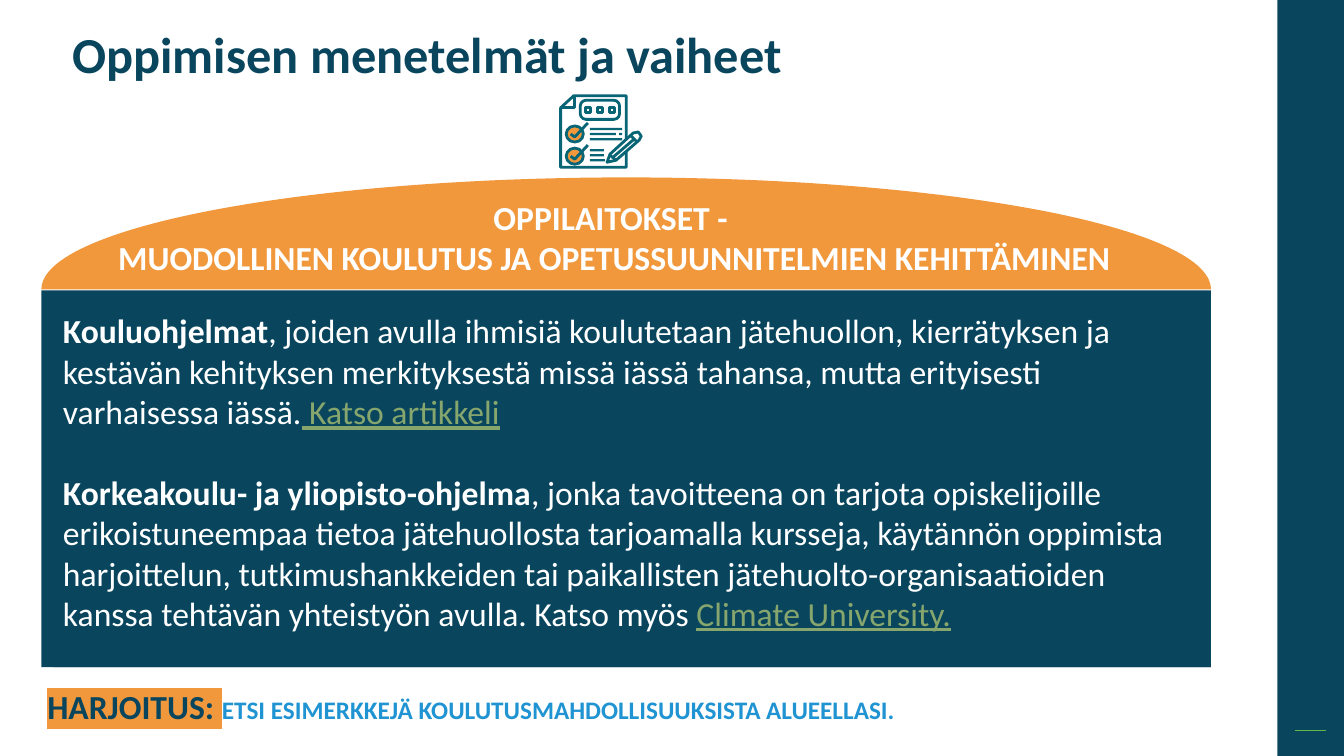
from collections import namedtuple
from math import cos, pi, sin

from lxml.etree import SubElement
from pptx import Presentation
from pptx.dml.color import RGBColor
from pptx.enum.shapes import MSO_CONNECTOR, MSO_SHAPE
from pptx.enum.text import MSO_ANCHOR, PP_ALIGN
from pptx.oxml.ns import qn
from pptx.util import Inches, Pt

NAVY = RGBColor(0x09, 0x46, 0x5E)
ORANGE = RGBColor(0xF1, 0x98, 0x3D)
TEAL = RGBColor(0x08, 0x65, 0x75)
LINK_GREEN = RGBColor(0x87, 0xA6, 0x6E)
RULE_GREEN = RGBColor(0x60, 0xBA, 0x47)
BLUE = RGBColor(0x20, 0x94, 0xD2)
WHITE = RGBColor(0xFF, 0xFF, 0xFF)

WIDTH, HEIGHT = Inches(13.33), Inches(7.5)
Box = namedtuple("Box", "left top width height")
SLIDE_BOX = Box(0, 0, WIDTH, HEIGHT)


def part(box, left, top, width, height):
    return Box(
        round(box.left + box.width * left / 100),
        round(box.top + box.height * top / 100),
        round(box.width * width / 100),
        round(box.height * height / 100),
    )


def paint(shape, fill=None, line=None, weight=2):
    shape.shadow.inherit = False
    if fill is None:
        shape.fill.background()
    else:
        shape.fill.solid()
        shape.fill.fore_color.rgb = fill
    if line is None:
        shape.line.fill.background()
    else:
        shape.line.color.rgb = line
        shape.line.width = Pt(weight)
    return shape


def add_outline(slide, points, close=True, **style):
    points = [(round(x), round(y)) for x, y in points]
    builder = slide.shapes.build_freeform(*points[0])
    builder.add_line_segments(points[1:], close=close)
    return paint(builder.convert_to_shape(), **style)


def add_run(paragraph, text, color, size=24, bold=False, underline=False, highlight=None):
    run = paragraph.add_run()
    run.text = text
    font = run.font
    font.name, font.size, font.bold = "Calibri", Pt(size), bold
    font.color.rgb = color
    if underline:
        font.underline = True
    if highlight is not None:
        marker = SubElement(run._r.rPr, qn("a:highlight"))
        SubElement(marker, qn("a:srgbClr")).set("val", str(highlight))
        run._r.rPr.find(qn("a:solidFill")).addnext(marker)


def start_text(shape, anchor=MSO_ANCHOR.TOP):
    frame = shape.text_frame
    frame.word_wrap = True
    frame.vertical_anchor = anchor
    return frame


def add_sidebar(slide, box):
    paint(slide.shapes.add_shape(MSO_SHAPE.RECTANGLE, *box), NAVY)
    mark = part(box, 26, 96.67, 47, 0)
    rule = slide.shapes.add_connector(
        MSO_CONNECTOR.STRAIGHT, mark.left, mark.top, mark.left + mark.width, mark.top
    )
    rule.line.color.rgb = RULE_GREEN
    rule.line.width = Pt(1)
    SubElement(rule._element.spPr, qn("a:effectLst"))


def add_title(slide, box):
    frame = start_text(slide.shapes.add_textbox(*box), MSO_ANCHOR.MIDDLE)
    title = frame.paragraphs[0]
    title.line_spacing = 0.9
    add_run(title, "Oppimisen menetelmät ja vaiheet", NAVY, 36, bold=True)


def add_dome(slide, box):
    radius = box.width / 2
    steps = 120
    arc = [
        (
            box.left + radius - radius * cos(pi * step / steps),
            box.top + box.height * (1 - sin(pi * step / steps)),
        )
        for step in range(steps + 1)
    ]
    add_outline(slide, arc, fill=ORANGE)
    frame = start_text(slide.shapes.add_textbox(*part(box, 5, 13, 88, 82)))
    headings = (
        "OPPILAITOKSET - ",
        "MUODOLLINEN KOULUTUS JA OPETUSSUUNNITELMIEN KEHITTÄMINEN",
    )
    for index, heading in enumerate(headings):
        line = frame.add_paragraph() if index else frame.paragraphs[0]
        line.alignment = PP_ALIGN.CENTER
        add_run(line, heading, WHITE, bold=True)


def add_programmes(slide, box):
    paint(slide.shapes.add_shape(MSO_SHAPE.RECTANGLE, *box), NAVY)
    body = slide.shapes.add_shape(MSO_SHAPE.RECTANGLE, *part(box, 1, 4, 99, 96))
    frame = start_text(paint(body, NAVY))
    programmes = (
        (
            "Kouluohjelmat",
            ", joiden avulla ihmisiä koulutetaan jätehuollon, kierrätyksen ja kestävän "
            "kehityksen merkityksestä missä iässä tahansa, mutta erityisesti varhaisessa iässä.",
            " Katso artikkeli",
        ),
        (
            "Korkeakoulu- ja yliopisto-ohjelma",
            ", jonka tavoitteena on tarjota opiskelijoille erikoistuneempaa tietoa "
            "jätehuollosta tarjoamalla kursseja, käytännön oppimista harjoittelun, "
            "tutkimushankkeiden tai paikallisten jätehuolto-organisaatioiden kanssa "
            "tehtävän yhteistyön avulla. Katso myös ",
            "Climate University.",
        ),
    )
    for index, (name, description, reference) in enumerate(programmes):
        programme = frame.add_paragraph() if index else frame.paragraphs[0]
        programme.alignment = PP_ALIGN.LEFT
        if index:
            programme.space_before = Pt(29)
        add_run(programme, name, WHITE, bold=True)
        add_run(programme, description, WHITE)
        add_run(programme, reference, LINK_GREEN, underline=True)


def add_checklist(slide, box):
    unit = box.width / 82

    def place(x, y):
        return box.left + x * unit, box.top + y * unit

    def stroke(points, close=False, fill=None, weight=2):
        add_outline(
            slide, [place(*point) for point in points], close, fill=fill, line=TEAL, weight=weight
        )

    def block(kind, x, y, width, height, **style):
        left, top = place(x, y)
        frame = (round(value) for value in (left, top, width * unit, height * unit))
        return paint(slide.shapes.add_shape(kind, *frame), **style)

    stroke([(1, 13), (14, 1), (66, 1), (66, 72), (1, 72)], close=True)
    stroke([(15, 1), (15, 13), (1, 13)])
    code_box = block(MSO_SHAPE.ROUNDED_RECTANGLE, 20.5, 5.5, 39, 19, line=TEAL)
    code_box.adjustments[0] = 0.3
    for column in range(3):
        block(MSO_SHAPE.RECTANGLE, 25.5 + 12 * column, 13, 5, 4.5, line=TEAL)
    for y in (39, 61):
        block(MSO_SHAPE.OVAL, 6.5, y - 8, 17, 16, fill=ORANGE, line=TEAL)
        stroke([(11, y), (15, y + 3), (28, y - 11)])
    bars = ((30, 33, 32), (30, 38, 26), (59, 38, 3), (30, 43, 32),
            (30, 54, 14), (30, 59, 14), (30, 64, 15))
    for x, y, width in bars:
        block(MSO_SHAPE.RECTANGLE, x, y, width, 2.3, fill=TEAL)
    stroke(
        [(47, 67), (50, 59), (73, 38), (78, 37), (81, 41), (79, 45), (56, 65)],
        close=True, fill=WHITE,
    )
    stroke([(53, 62), (74, 44)])
    stroke([(71, 41), (76, 46)])
    stroke([(50, 60), (56, 65)])


def add_exercise(slide, box):
    frame = start_text(slide.shapes.add_textbox(*box))
    exercise = frame.paragraphs[0]
    add_run(exercise, "HARJOITUS: ", NAVY, bold=True, highlight=ORANGE)
    add_run(
        exercise, "ETSI ESIMERKKEJÄ KOULUTUSMAHDOLLISUUKSISTA ALUEELLASI.", BLUE, 18, bold=True
    )


def main():
    presentation = Presentation()
    presentation.slide_width, presentation.slide_height = WIDTH, HEIGHT
    slide = presentation.slides.add_slide(presentation.slide_layouts[6])
    add_sidebar(slide, part(SLIDE_BOX, 95.05, 0, 4.95, 100))
    add_title(slide, part(SLIDE_BOX, 4.65, 3.47, 63.09, 8.13))
    add_programmes(slide, part(SLIDE_BOX, 3.08, 38.4, 87.02, 49.87))
    add_dome(slide, part(SLIDE_BOX, 3.08, 23.47, 87.02, 14.8))
    add_checklist(slide, part(SLIDE_BOX, 41.64, 12.53, 6.15, 9.87))
    add_exercise(slide, part(SLIDE_BOX, 2.78, 90.13, 82.07, 6.67))
    presentation.save("out.pptx")


if __name__ == "__main__":
    main()
